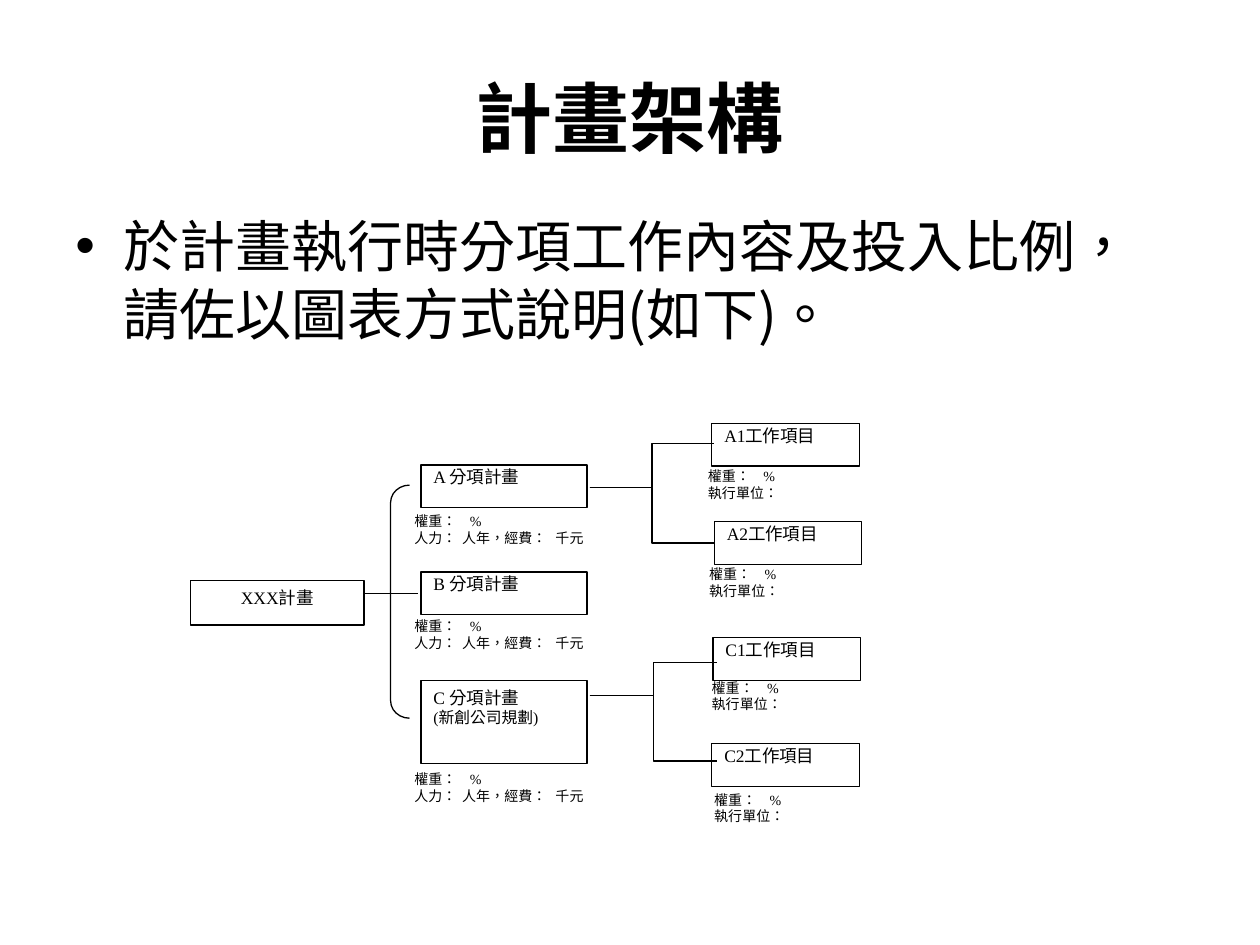
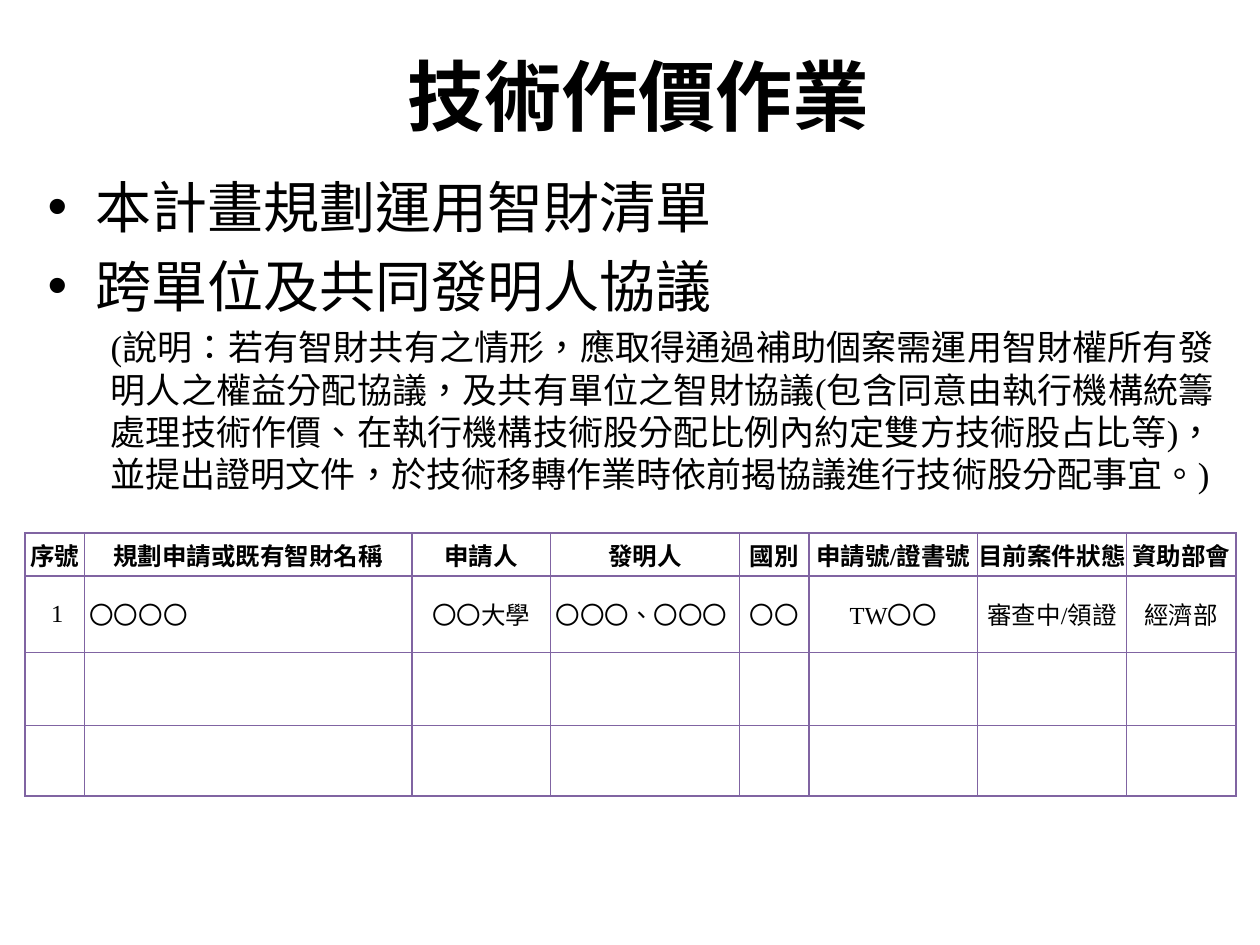
from lxml.etree import SubElement
from pptx import Presentation
from pptx.dml.color import RGBColor
from pptx.enum.lang import MSO_LANGUAGE_ID as Lang
from pptx.enum.shapes import MSO_CONNECTOR as Connector, MSO_SHAPE as Shape
from pptx.enum.text import MSO_ANCHOR as Anchor, PP_ALIGN as Align
from pptx.oxml.ns import qn
from pptx.util import Inches, Pt

SANS, SERIF = "Noto Sans CJK SC", "Times New Roman"
BLACK, WHITE, PURPLE = "000000", "FFFFFF", "8064A2"
TIGHT = {"margin_top": Inches(0.01), "margin_bottom": Inches(0.01)}
FLUSH = {f"margin_{side}": 0 for side in ("left", "right", "top", "bottom")}

BRANCHES = [
    (3.69, 0.34, ["A 分項計畫"], 4.02),
    (4.54, 0.34, ["B 分項計畫"], 4.85),
    (5.4, 0.66, ["C 分項計畫", "(新創公司規劃)"], 6.07),
]
WORK_ITEMS = [
    ("A1", 5.65, 3.36, 5.52, 3.66, {}),
    ("A2", 5.67, 4.14, 5.53, 4.48, TIGHT),
    ("C1", 5.66, 5.06, 5.55, 5.34, {}),
    ("C2", 5.65, 5.9, 5.57, 6.27, TIGHT),
]
FORKS = [(3.87, 5.67, (3.52, 4.31)), (5.52, 5.69, (5.26, 6.04))]
WEIGHT = ("權重：\t%", [0.44])
STAFFING = ("人力：\t人年，經費：\t千元", [0.38, 1.12])
EXECUTOR = ("執行單位：", [])

IP_POINTS = ["本計畫規劃運用智財清單", "跨單位及共同發明人協議"]
IP_NOTE = (
    "(說明：若有智財共有之情形，應取得通過補助個案需運用智財權所有發明人之權益分配協議，"
    "及共有單位之智財協議(包含同意由執行機構統籌處理技術作價、"
    "在執行機構技術股分配比例內約定雙方技術股占比等)，並提出證明文件，"
    "於技術移轉作業時依前揭協議進行技術股分配事宜。)"
)
IP_COLUMNS = [
    ("序號", 0.47, "1"),
    ("規劃申請或既有智財名稱", 2.6, "〇〇〇〇"),
    ("申請人", 1.1, "〇〇大學"),
    ("發明人", 1.5, "〇〇〇、〇〇〇"),
    ("國別", 0.55, "〇〇"),
    ("申請號/證書號", 1.34, "TW〇〇"),
    ("目前案件狀態", 1.18, "審查中/領證"),
    ("資助部會", 0.87, "經濟部"),
]
ROW_HEIGHTS = [0.34, 0.61, 0.58, 0.56]
LEFT_COLUMNS, INDENTED_COLUMNS = (1, 3), (0, 1, 3)


def color(hex_code):
    """Turn a hex string into a colour."""
    return RGBColor.from_string(hex_code)


def apply(target, formats):
    """Set each attribute named in a dict of format values."""
    for name, value in formats.items():
        setattr(target, name, value)


def write(paragraph, text, size, font=SERIF, bold=False, **formats):
    """Write one styled run and format its paragraph."""
    run = paragraph.add_run()
    run.text = text
    apply(run.font, {"size": Pt(size), "name": font, "bold": bold,
                     "language_id": Lang.TRADITIONAL_CHINESE})
    run.font.color.rgb = color(BLACK)
    apply(paragraph, {"alignment": Align.LEFT, **formats})
    return paragraph


def paragraphs(frame, count):
    """Return the given number of paragraphs of a fresh text frame."""
    return [frame.paragraphs[0]] + [frame.add_paragraph() for _ in range(count - 1)]


def indent(paragraph, left, hanging=0.0):
    """Set the left margin and hanging indent in inches."""
    properties = paragraph._p.get_or_add_pPr()
    properties.set("marL", str(Inches(left)))
    properties.set("indent", str(-Inches(hanging)))
    return properties


def add_bullet(paragraph):
    """Give a paragraph a round bullet."""
    properties = indent(paragraph, 0.38, 0.38)
    SubElement(properties, qn("a:buFont"), typeface="Arial")
    SubElement(properties, qn("a:buChar"), char="•")


def add_tabs(paragraph, stops):
    """Add left tab stops at the given inches."""
    if stops:
        tabs = SubElement(paragraph._p.get_or_add_pPr(), qn("a:tabLst"))
        for stop in stops:
            SubElement(tabs, qn("a:tab"), pos=str(Inches(stop)), algn="l")


def add_frame(slide, box, **formats):
    """Add a wrapping text box and return its text frame."""
    frame = slide.shapes.add_textbox(*map(Inches, box)).text_frame
    apply(frame, {"word_wrap": True, **formats})
    return frame


def add_title(slide, left, top, text, font):
    """Add the centred bold slide title."""
    frame = add_frame(slide, (left, top, 9, 1.25), vertical_anchor=Anchor.MIDDLE)
    write(frame.paragraphs[0], text, 44, font, True, alignment=Align.CENTER)


def add_body(slide, box, points, font, align):
    """Add the large bulleted text and return its frame."""
    frame = add_frame(slide, box)
    for paragraph, text in zip(paragraphs(frame, len(points)), points):
        write(paragraph, text, 32, font, alignment=align,
              space_before=Pt(6.4), line_spacing=Pt(39))
        add_bullet(paragraph)
    return frame


def outline(shape):
    """Give a shape or connector a thin black line."""
    shape.line.color.rgb = color(BLACK)
    shape.line.width = Pt(0.75)


def add_box(slide, box, lines, align=Align.LEFT, **formats):
    """Add a white outlined box with a heading and an optional smaller line."""
    shape = slide.shapes.add_shape(Shape.RECTANGLE, *map(Inches, box))
    shape.shadow.inherit = False
    shape.fill.solid()
    shape.fill.fore_color.rgb = color(WHITE)
    outline(shape)
    frame = shape.text_frame
    apply(frame, {"word_wrap": True, "vertical_anchor": Anchor.TOP, **formats})
    for paragraph, text, size in zip(paragraphs(frame, len(lines)), lines, (10, 9)):
        write(paragraph, text, size, alignment=align)


def add_caption(slide, left, top, lines, **formats):
    """Add the small figures shown below a box."""
    frame = add_frame(slide, (left, top, 2.05, 0.67), **formats)
    for paragraph, (text, stops) in zip(paragraphs(frame, len(lines)), lines):
        add_tabs(write(paragraph, text, 8), stops)


def add_link(slide, start, end, kind=Connector.STRAIGHT):
    """Connect two points with a thin line."""
    link = slide.shapes.add_connector(kind, *map(Inches, start + end))
    outline(link)
    SubElement(link._element.spPr, qn("a:effectLst"))


def add_bracket(slide, box):
    """Add the left bracket that gathers the branches."""
    bracket = slide.shapes.add_shape(Shape.LEFT_BRACKET, *map(Inches, box))
    bracket.shadow.inherit = False
    bracket.fill.background()
    bracket.adjustments[0] = 0.919
    outline(bracket)


def format_cell(cell):
    """Give a cell purple borders, no fill and no margins."""
    properties = cell._tc.get_or_add_tcPr()
    for side in ("lnL", "lnR", "lnT", "lnB"):
        border = SubElement(properties, qn(f"a:{side}"), w=str(Pt(1)))
        fill = SubElement(border, qn("a:solidFill"))
        SubElement(fill, qn("a:srgbClr"), val=PURPLE)
    cell.fill.background()
    apply(cell, {"vertical_anchor": Anchor.MIDDLE, **FLUSH})


def add_ip_table(slide):
    """Add the list of intellectual property."""
    box = (0.2, 4.23, sum(width for _, width, _ in IP_COLUMNS), sum(ROW_HEIGHTS))
    table = slide.shapes.add_table(
        len(ROW_HEIGHTS), len(IP_COLUMNS), *map(Inches, box)).table
    apply(table, {"first_row": False, "horz_banding": False})
    for row, height in zip(table.rows, ROW_HEIGHTS):
        row.height = Inches(height)
    for cell in table.iter_cells():
        format_cell(cell)
    for index, (heading, width, example) in enumerate(IP_COLUMNS):
        table.columns[index].width = Inches(width)
        top, first = (table.cell(row, index).text_frame.paragraphs[0] for row in (0, 1))
        write(top, heading, 14, bold=True, alignment=Align.CENTER)
        align = Align.LEFT if index in LEFT_COLUMNS else Align.CENTER
        write(first, example, 14, alignment=align)
        if index in INDENTED_COLUMNS:
            indent(first, 0.04)


def build_structure(slide):
    """Build the slide on the project structure."""
    add_body(slide, (0.5, 1.62, 9, 4.95),
             ["於計畫執行時分項工作內容及投入比例，請佐以圖表方式說明(如下)。"],
             SANS, Align.LEFT)
    add_title(slide, 0.5, 0.3, "計畫架構", SANS)
    add_box(slide, (1.51, 4.61, 1.38, 0.35), ["XXX計畫"], Align.CENTER)
    for top, height, lines, caption_top in BRANCHES:
        margins = TIGHT if len(lines) == 1 else {}
        add_box(slide, (3.34, top, 1.32, height), lines, **margins)
        add_caption(slide, 3.19, caption_top, [WEIGHT, STAFFING])
    add_link(slide, (2.88, 4.71), (3.32, 4.71))
    add_bracket(slide, (3.1, 3.85, 0.15, 1.85))
    for code, left, top, caption_left, caption_top, margins in WORK_ITEMS:
        add_box(slide, (left, top, 1.17, 0.34), [f"{code}工作項目"], **TIGHT)
        add_caption(slide, caption_left, caption_top, [WEIGHT, EXECUTOR], **margins)
    add_link(slide, (4.68, 3.87), (4.82, 3.87))
    for start, right, ends in FORKS:
        for end in ends:
            add_link(slide, (4.68, start), (right, end), Connector.ELBOW)


def build_valuation(slide):
    """Build the slide on technology valuation."""
    frame = add_body(slide, (0.28, 1.31, 9.45, 2.95), IP_POINTS, SERIF, Align.JUSTIFY)
    note = write(frame.add_paragraph(), IP_NOTE, 20, alignment=Align.JUSTIFY,
                 level=1, space_before=Pt(4), line_spacing=Pt(24))
    indent(note, 0.5)
    add_title(slide, 0.57, 0.13, "技術作價作業", SERIF)
    add_ip_table(slide)


def main():
    """Build both slides and save them."""
    deck = Presentation()
    apply(deck, {"slide_width": Inches(10), "slide_height": Inches(7.5)})
    for build in (build_structure, build_valuation):
        build(deck.slides.add_slide(deck.slide_layouts[6]))
    deck.save("out.pptx")


if __name__ == "__main__":
    main()
